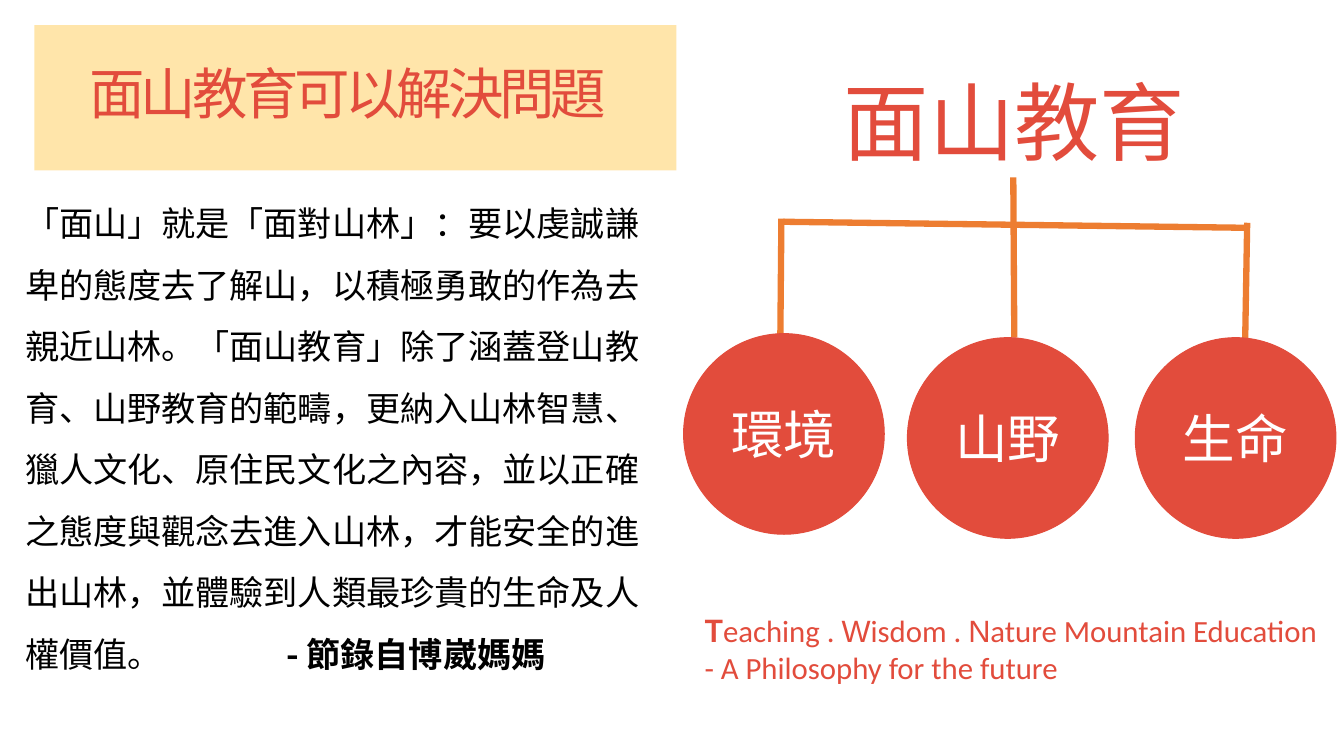
from lxml.etree import SubElement
from pptx import Presentation
from pptx.dml.color import RGBColor
from pptx.enum.shapes import MSO_CONNECTOR, MSO_SHAPE
from pptx.enum.text import MSO_ANCHOR, PP_ALIGN
from pptx.oxml.ns import qn
from pptx.util import Inches, Pt

# Content
TITLE = "面山教育可以解決問題"
BODY = (
    "「面山」就是「面對山林」：要以虔誠謙卑的態度去了解山，以積極勇敢的作為去親近山林。"
    "「面山教育」除了涵蓋登山教育、山野教育的範疇，更納入山林智慧、獵人文化、"
    "原住民文化之內容，並以正確之態度與觀念去進入山林，才能安全的進出山林，"
    "並體驗到人類最珍貴的生命及人權價值。"
)
ATTRIBUTION = "\t- 節錄自博崴媽媽"
DIAGRAM_HEADING = "面山教育"
BRANCHES = [("環境", 6.78, 3.31), ("山野", 9.0, 3.35), ("生命", 11.26, 3.35)]
TREE_LINES = [
    (7.77, 2.2, 12.36, 2.26),
    (7.75, 2.17, 7.74, 3.32),
    (10.05, 1.76, 10.06, 3.35),
    (12.37, 2.21, 12.35, 3.36),
]
MOTTO = [
    [("T", "Lato", True), ("eaching . ", "Calibri", False), ("W", "Arial", False),
     ("isdom . ", "Calibri", False), ("N", "Arial", False),
     ("ature Mountain Education", "Calibri", False)],
    [("- A Philosophy for the future", "Calibri", False)],
]
CIRCLE_SIZE = 1.99
ATTRIBUTION_TAB = 2.59

THEME = {
    "red": RGBColor(0xE2, 0x4C, 0x3C),
    "cream": RGBColor(0xFF, 0xE5, 0xAA),
    "orange": RGBColor(0xED, 0x7D, 0x31),
    "black": RGBColor(0, 0, 0),
    "white": RGBColor(0xFF, 0xFF, 0xFF),
    "font": "Noto Sans CJK SC",
    "title": 39.6,
    "body": 24.4,
    "heading": 60.9,
    "branch": 37.5,
    "motto": 22,
    "tree_line": 4.5,
}

presentation = Presentation()
presentation.slide_width = Inches(13.33)
presentation.slide_height = Inches(7.5)
slide = presentation.slides.add_slide(presentation.slide_layouts[6])


def add_run(paragraph, text, size, color, font=THEME["font"], bold=False):
    run = paragraph.add_run()
    run.text = text
    run.font.size = Pt(THEME[size])
    run.font.color.rgb = THEME[color]
    run.font.bold = bold
    run.font.name = font
    SubElement(run._r.get_or_add_rPr(), qn("a:ea"), typeface=font)
    return run


def add_text_frame(left, top, width, height, wrap=True):
    box = slide.shapes.add_textbox(Inches(left), Inches(top), Inches(width), Inches(height))
    box.text_frame.word_wrap = wrap
    return box.text_frame


def add_filled_shape(kind, left, top, width, height, color):
    shape = slide.shapes.add_shape(kind, Inches(left), Inches(top), Inches(width), Inches(height))
    shape.shadow.inherit = False
    shape.fill.solid()
    shape.fill.fore_color.rgb = THEME[color]
    shape.line.fill.background()
    return shape


# Title on its band
add_filled_shape(MSO_SHAPE.RECTANGLE, 0.34, 0.25, 6.37, 1.44, "cream")
title_frame = add_text_frame(0.79, 0.58, 5.34, 0.76, wrap=False)
title_frame.vertical_anchor = MSO_ANCHOR.MIDDLE
title_paragraph = title_frame.paragraphs[0]
title_paragraph.line_spacing = 0.9
title_run = add_run(title_paragraph, TITLE, "title", "red")
title_run._r.get_or_add_rPr().set("spc", "-300")

# Body text with the attribution at a tab stop
body_paragraph = add_text_frame(0.15, 1.76, 6.48, 5.64).paragraphs[0]
body_paragraph.line_spacing = 1.5
tab_list = SubElement(body_paragraph._p.get_or_add_pPr(), qn("a:tabLst"))
SubElement(tab_list, qn("a:tab"), pos=str(Inches(ATTRIBUTION_TAB)), algn="l")
add_run(body_paragraph, BODY, "body", "black")
add_run(body_paragraph, ATTRIBUTION, "body", "black", bold=True)

# Diagram heading
heading_paragraph = add_text_frame(7.59, 0.64, 4.94, 1.13).paragraphs[0]
heading_paragraph.alignment = PP_ALIGN.CENTER
add_run(heading_paragraph, DIAGRAM_HEADING, "heading", "red")

# Tree lines
for ends in TREE_LINES:
    connector = slide.shapes.add_connector(MSO_CONNECTOR.STRAIGHT, *map(Inches, ends))
    connector.line.color.rgb = THEME["orange"]
    connector.line.width = Pt(THEME["tree_line"])
    SubElement(connector._element.spPr, qn("a:effectLst"))

# Branch circles
for label, left, top in BRANCHES:
    circle = add_filled_shape(MSO_SHAPE.OVAL, left, top, CIRCLE_SIZE, CIRCLE_SIZE, "red")
    circle.line.color.rgb = THEME["red"]
    circle.line.width = Pt(0.75)
    circle.text_frame.word_wrap = False
    circle.text_frame.vertical_anchor = MSO_ANCHOR.MIDDLE
    label_paragraph = circle.text_frame.paragraphs[0]
    label_paragraph.alignment = PP_ALIGN.CENTER
    add_run(label_paragraph, label, "branch", "white")

# Motto
motto_frame = add_text_frame(6.89, 6.02, 6.44, 0.84)
for index, pieces in enumerate(MOTTO):
    paragraph = motto_frame.add_paragraph() if index else motto_frame.paragraphs[0]
    for text, font, bold in pieces:
        add_run(paragraph, text, "motto", "red", font, bold)

presentation.save("out.pptx")
